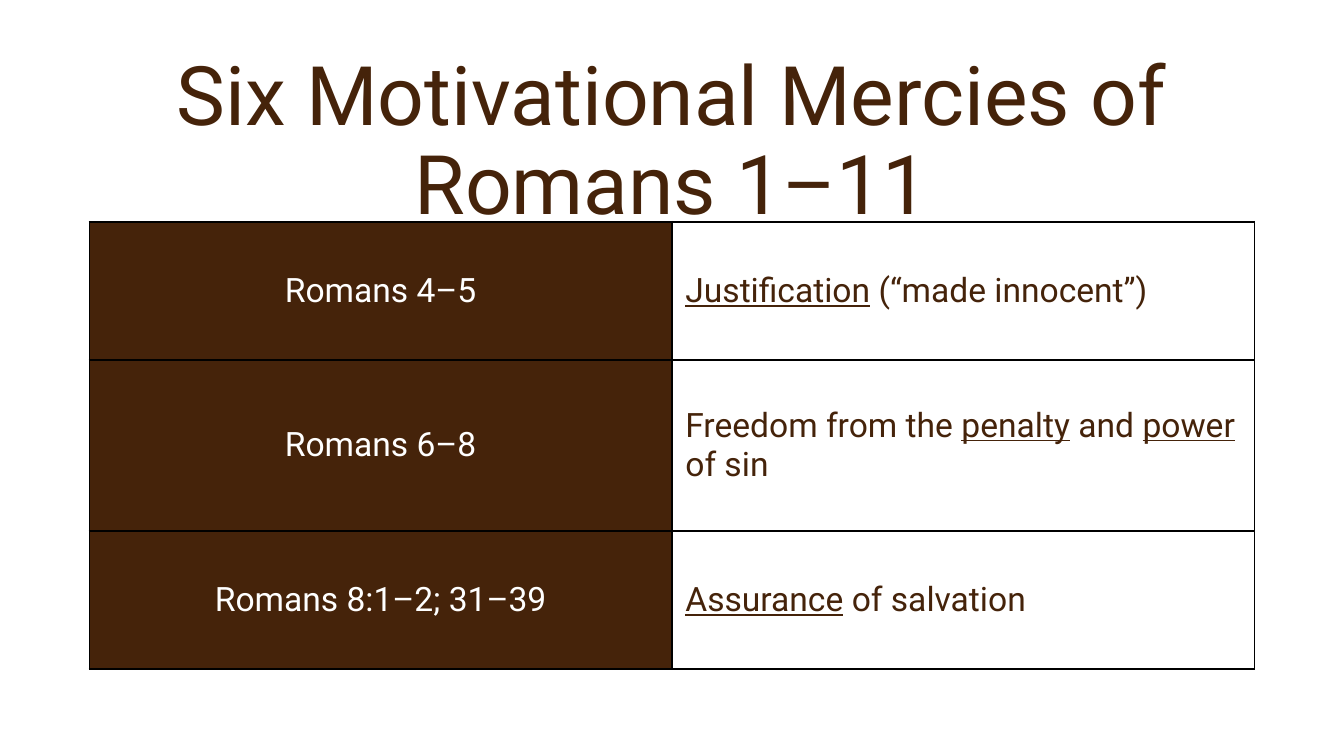
from lxml import etree
from pptx import Presentation
from pptx.dml.color import RGBColor
from pptx.enum.text import MSO_ANCHOR as Anchor, PP_ALIGN as Align
from pptx.oxml.ns import qn
from pptx.util import Inches, Pt

BROWN = RGBColor(0x45, 0x23, 0x0A)
WHITE = RGBColor(0xFF, 0xFF, 0xFF)
BLACK = RGBColor(0x00, 0x00, 0x00)
FONT = "Roboto"
SLIDE_WIDTH = 10
SLIDE_HEIGHT = SLIDE_WIDTH * 9 / 16

# Words between underscores are underlined.
MERCIES = [
    ("Romans 4–5", "_Justification_ (“made innocent”)", 1.03),
    ("Romans 6–8", "Freedom from the _penalty_ and _power_ of sin", 1.27),
    ("Romans 8:1–2; 31–39", "_Assurance_ of salvation", 1.03),
]


def write_text(frame, text, size=18, color=BROWN, align=Align.LEFT, line_spacing=None):
    """Fill the frame with one paragraph, underlining words between underscores."""
    frame.word_wrap = True
    paragraph = frame.paragraphs[0]
    paragraph.alignment = align
    if line_spacing:
        paragraph.line_spacing = line_spacing
    for index, part in enumerate(text.split("_")):
        if not part:
            continue
        run = paragraph.add_run()
        run.text = part
        run.font.name = FONT
        run.font.size = Pt(size)
        run.font.color.rgb = color
        if index % 2:
            run.font.underline = True


def add_borders(cell, color=BLACK, width=1):
    properties = cell._tc.get_or_add_tcPr()
    for position, side in enumerate(("lnL", "lnR", "lnT", "lnB")):
        line = etree.Element(qn(f"a:{side}"), w=str(Pt(width)))
        fill = etree.SubElement(line, qn("a:solidFill"))
        etree.SubElement(fill, qn("a:srgbClr"), val=str(color))
        properties.insert(position, line)


def add_title(slide, left, top, width, height):
    box = slide.shapes.add_textbox(Inches(left), Inches(top), Inches(width), Inches(height))
    box.text_frame.vertical_anchor = Anchor.MIDDLE
    write_text(box.text_frame, "Six Motivational Mercies of Romans 1–11",
               size=44, align=Align.CENTER, line_spacing=0.9)


def add_mercies_table(slide, left, top, width, height):
    table = slide.shapes.add_table(len(MERCIES), 2, Inches(left), Inches(top),
                                   Inches(width), Inches(height)).table
    table.first_row = False
    table.horz_banding = False
    for column in table.columns:
        column.width = Inches(width / 2)
    for row, (passage, mercy, row_height) in zip(table.rows, MERCIES):
        row.height = Inches(row_height)
        passage_cell, mercy_cell = row.cells
        for cell, fill in ((passage_cell, BROWN), (mercy_cell, WHITE)):
            cell.vertical_anchor = Anchor.MIDDLE
            cell.fill.solid()
            cell.fill.fore_color.rgb = fill
            add_borders(cell)
        write_text(passage_cell.text_frame, passage, color=WHITE, align=Align.CENTER)
        write_text(mercy_cell.text_frame, mercy)


def main():
    deck = Presentation()
    deck.slide_width = Inches(SLIDE_WIDTH)
    deck.slide_height = Inches(SLIDE_HEIGHT)
    slide = deck.slides.add_slide(deck.slide_layouts[6])
    add_title(slide, 0.5, 0.48, 9, 1.17)
    table_width = 8.67
    add_mercies_table(slide, (SLIDE_WIDTH - table_width) / 2, 1.65, table_width, 3.33)
    deck.save("out.pptx")


if __name__ == "__main__":
    main()
